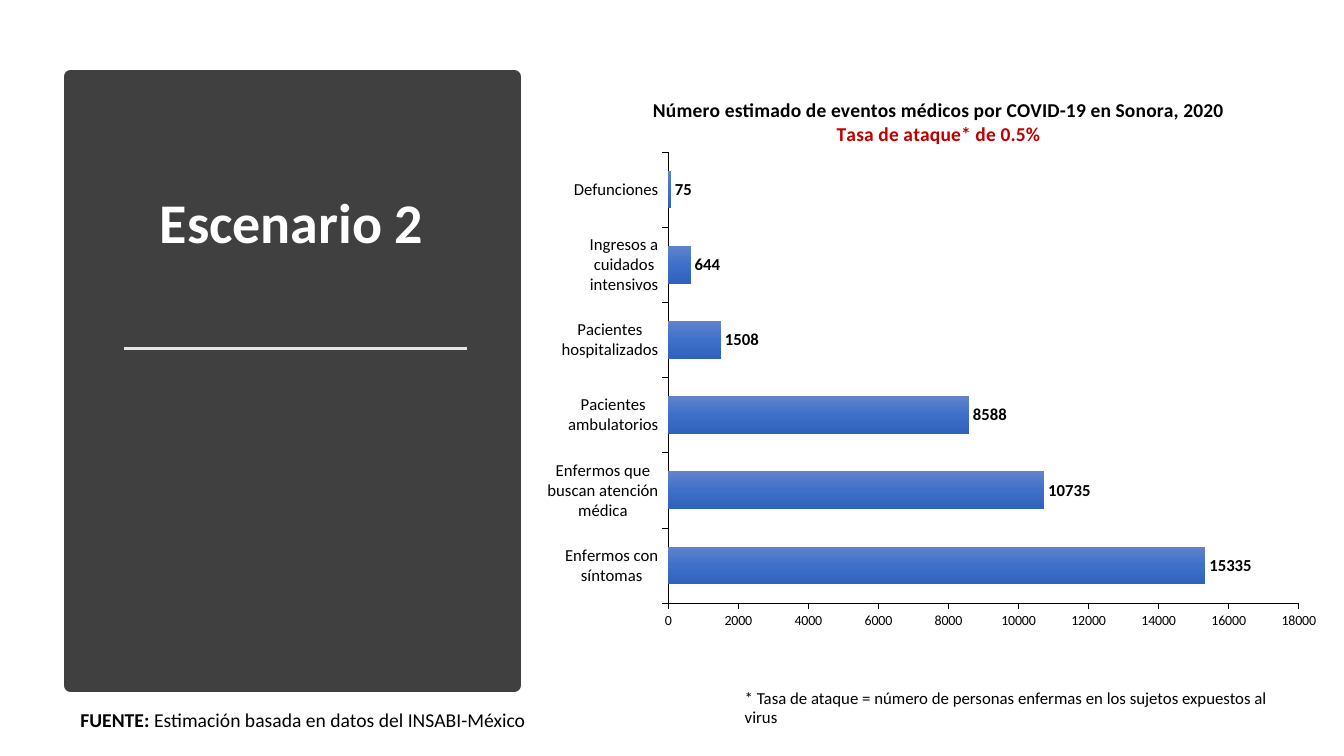
"""Build the Escenario 2 slide with its panel, bar chart and notes."""
from lxml import etree
from pptx import Presentation
from pptx.chart.data import CategoryChartData
from pptx.dml.color import RGBColor
from pptx.enum import chart as ch, shapes as sh, text as tx
from pptx.oxml import parse_xml
from pptx.oxml.ns import nsdecls, qn
from pptx.util import Pt

FONT = "Calibri"
BLACK = RGBColor(0x00, 0x00, 0x00)
WHITE = RGBColor(0xFF, 0xFF, 0xFF)
CHARCOAL = RGBColor(0x40, 0x40, 0x40)
PALE_GRAY = RGBColor(0xE7, 0xE6, 0xE6)
RED = RGBColor(0xC0, 0x00, 0x00)
BAR_STOPS = [
    (0, RGBColor(0x61, 0x83, 0xCB)),
    (50, RGBColor(0x3E, 0x70, 0xCA)),
    (100, RGBColor(0x30, 0x62, 0xBB)),
]
EVENTS = {
    "Enfermos con síntomas": 15335,
    "Enfermos que buscan atención médica": 10735,
    "Pacientes ambulatorios": 8588,
    "Pacientes hospitalizados": 1508,
    "Ingresos a cuidados intensivos": 644,
    "Defunciones": 75,
}


def style_font(font, size, color=BLACK, bold=False):
    """Apply the slide's typeface with a size, colour and weight."""
    font.name, font.size, font.bold = FONT, Pt(size), bold
    font.color.rgb = color


def add_text(slide, box, size, runs, color=BLACK, bold=False, wrap=True):
    """Add a one-paragraph text box and return its shape."""
    shape = slide.shapes.add_textbox(*map(Pt, box))
    shape.text_frame.word_wrap = wrap
    paragraph = shape.text_frame.paragraphs[0]
    paragraph.line_spacing = 0.9
    style_font(paragraph.font, size, color, bold)
    for words, heavy in runs:
        run = paragraph.add_run()
        run.text = words
        if heavy:
            run.font.bold = True
    return shape


def add_panel(slide, left, top, width, height):
    """Draw the dark panel with its heading and rule."""
    panel = slide.shapes.add_shape(
        sh.MSO_SHAPE.RECTANGLE, *map(Pt, (left, top, width, height)))
    panel.shadow.inherit = False
    panel.fill.solid()
    panel.fill.fore_color.rgb = CHARCOAL
    panel.line.color.rgb = CHARCOAL
    panel.line.width = Pt(10)

    heading = add_text(slide, (left + 34, top + 25, width - 69, 163),
                       40, [("Escenario 2", False)], WHITE, True)
    heading.text_frame.vertical_anchor = tx.MSO_ANCHOR.MIDDLE
    heading.text_frame.paragraphs[0].alignment = tx.PP_ALIGN.CENTER

    rule_top = top + 194.4
    rule = slide.shapes.add_connector(
        sh.MSO_CONNECTOR.STRAIGHT,
        *map(Pt, (left + 38.2, rule_top, left + width - 33.8, rule_top)))
    rule.line.color.rgb = PALE_GRAY
    rule.line.width = Pt(1.75)
    etree.SubElement(rule.element.spPr, qn("a:effectLst"))


def manual_layout(**settings):
    """Return a chart layout element with the given settings."""
    items = "".join(f'<c:{key} val="{value}"/>' for key, value in settings.items())
    return parse_xml(f'<c:layout {nsdecls("c")}>'
                     f'<c:manualLayout>{items}</c:manualLayout></c:layout>')


def replace_layout(parent, layout, index):
    """Put a layout element into a chart part in place of any other."""
    for old in parent.findall(qn("c:layout")):
        parent.remove(old)
    parent.insert(index, layout)


def style_axis(axis, size):
    """Give an axis thin black lines, outward ticks and plain labels."""
    axis.has_major_gridlines = False
    axis.major_tick_mark = ch.XL_TICK_MARK.OUTSIDE
    axis.minor_tick_mark = ch.XL_TICK_MARK.NONE
    axis.format.line.color.rgb = BLACK
    axis.format.line.width = Pt(0.5)
    style_font(axis.tick_labels.font, size)


def add_title(chart):
    """Set the two-line chart title."""
    frame = chart.chart_title.text_frame
    lines = [("Número estimado de eventos médicos por COVID-19 en Sonora, 2020", BLACK),
             ("Tasa de ataque* de 0.5%", RED)]
    for index, (words, color) in enumerate(lines):
        paragraph = frame.add_paragraph() if index else frame.paragraphs[0]
        paragraph.alignment = tx.PP_ALIGN.CENTER
        style_font(paragraph.font, 14, color, True)
        run = paragraph.add_run()
        run.text = words
        style_font(run.font, 14, color, True)
    chart.chart_title.include_in_layout = False
    replace_layout(chart.chart_title._element, manual_layout(
        xMode="edge", yMode="edge", x=0.13, y=0.04), 1)


def add_events_chart(slide, left, top, width, height):
    """Add the bar chart of estimated medical events."""
    data = CategoryChartData()
    data.categories = list(EVENTS)
    data.add_series("Series 1", list(EVENTS.values()))
    chart = slide.shapes.add_chart(
        ch.XL_CHART_TYPE.BAR_CLUSTERED,
        *map(Pt, (left, top, width, height)), data).chart
    style_font(chart.font, 10)
    chart.has_legend = False
    add_title(chart)

    style_axis(chart.category_axis, 12)
    style_axis(chart.value_axis, 10)
    chart.value_axis.minimum_scale = 0
    chart.value_axis.maximum_scale = 18000
    chart.value_axis.major_unit = 2000

    plot = chart.plots[0]
    plot.gap_width = 100
    plot.vary_by_categories = False
    plot.has_data_labels = True
    plot.data_labels.show_value = True
    plot.data_labels.position = ch.XL_LABEL_POSITION.OUTSIDE_END
    style_font(plot.data_labels.font, 12, bold=True)

    series = plot.series[0]
    series.invert_if_negative = False
    stops = "".join(f'<a:gs pos="{position * 1000}"><a:srgbClr val="{color}"/></a:gs>'
                    for position, color in BAR_STOPS)
    series.format.fill.background()
    properties = series._element.find(qn("c:spPr"))
    properties.replace(properties[0], parse_xml(
        f'<a:gradFill {nsdecls("a")} rotWithShape="1"><a:gsLst>{stops}</a:gsLst>'
        '<a:lin ang="5400000" scaled="0"/></a:gradFill>'))

    plot_area = chart._chartSpace.find(qn("c:chart")).find(qn("c:plotArea"))
    replace_layout(plot_area, manual_layout(
        layoutTarget="inner", xMode="edge", yMode="edge",
        x=0.154, y=0.139, w=0.824, h=0.76), 0)


def add_notes(slide, source_box, footnote_box):
    """Add the source line and the footnote on the attack rate."""
    add_text(slide, source_box, 14,
             [("FUENTE: ", True),
              ("Estimación basada en datos del INSABI-México", False)], wrap=False)
    add_text(slide, footnote_box, 12,
             [("* Tasa de ataque = número de personas enfermas "
               "en los sujetos expuestos al virus", False)])


def main():
    """Build and save the presentation."""
    presentation = Presentation()
    presentation.slide_width, presentation.slide_height = Pt(960), Pt(540)
    slide = presentation.slides.add_slide(presentation.slide_layouts[6])
    add_panel(slide, 50.4, 54.7, 316.8, 434.9)
    add_events_chart(slide, 391, 49.7, 549.4, 424)
    add_notes(slide, (50.4, 504, 333.4, 22.3), (524.9, 489.6, 413.3, 31))
    presentation.save("out.pptx")


if __name__ == "__main__":
    main()
